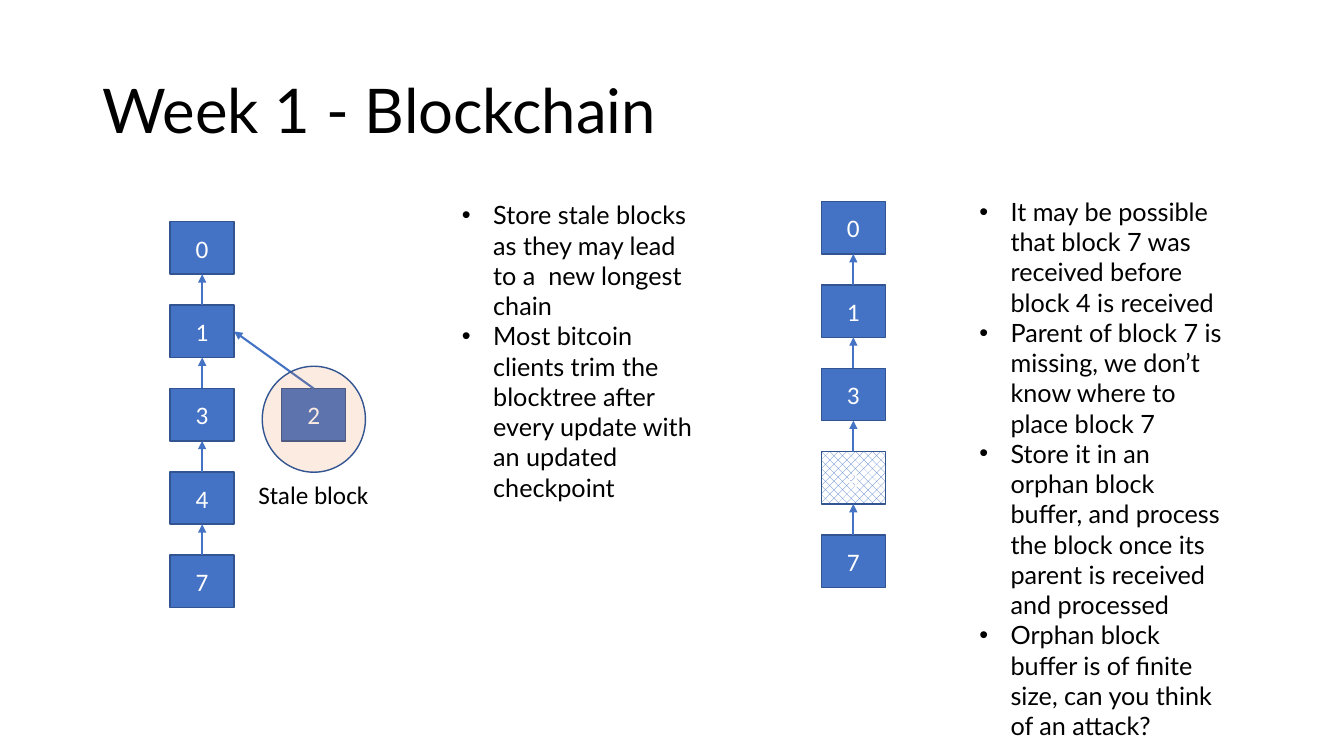
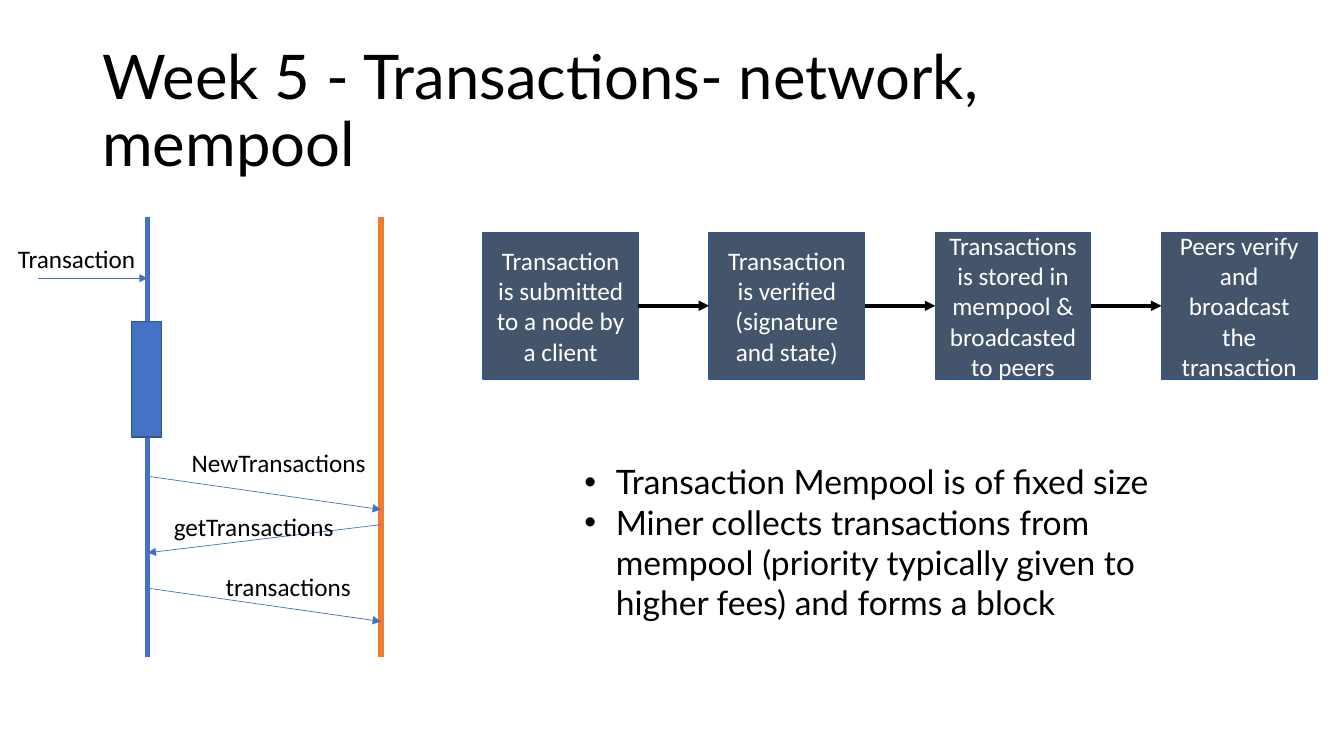
"""Build two slides on block chains and on the path of a transaction."""
from dataclasses import dataclass
from itertools import pairwise

from lxml.etree import SubElement
from pptx import Presentation
from pptx.dml.color import RGBColor
from pptx.enum.dml import MSO_PATTERN
from pptx.enum.shapes import MSO_CONNECTOR, MSO_SHAPE
from pptx.enum.text import MSO_ANCHOR, PP_ALIGN
from pptx.oxml.ns import qn
from pptx.util import Cm, Pt


@dataclass(frozen=True)
class Theme:
    blue: RGBColor = RGBColor.from_string("4472C4")
    outline: RGBColor = RGBColor.from_string("325491")
    orange: RGBColor = RGBColor.from_string("ED7D31")
    slate: RGBColor = RGBColor.from_string("44546A")
    black: RGBColor = RGBColor.from_string("000000")
    white: RGBColor = RGBColor.from_string("FFFFFF")
    heading_font: str = "Lato"
    label_font: str = "Calibri"
    title_size: int = 44
    large_size: int = 24
    text_size: int = 18


theme = Theme()


def add_box(slide, place, lines=(), fill=None, font=theme.label_font, size=theme.text_size,
            bullets=False, wrap=True, kind=MSO_SHAPE.RECTANGLE):
    bounds = [Cm(length) for length in place]
    if fill is None:
        shape = slide.shapes.add_textbox(*bounds)
    else:
        shape = slide.shapes.add_shape(kind, *bounds)
        shape.shadow.inherit = False
        shape.fill.solid()
        shape.fill.fore_color.rgb = fill
        shape.line.color.rgb = theme.outline
        shape.line.width = Pt(1)
        shape.text_frame.vertical_anchor = MSO_ANCHOR.MIDDLE
    frame = shape.text_frame
    frame.word_wrap = wrap
    frame.text = "\n".join(lines)
    for paragraph in frame.paragraphs:
        paragraph.alignment = PP_ALIGN.LEFT if fill is None else PP_ALIGN.CENTER
        if bullets:
            properties = paragraph._p.get_or_add_pPr()
            properties.set("marL", str(Cm(0.79)))
            properties.set("indent", str(-Cm(0.79)))
            SubElement(properties, qn("a:buFont"), typeface="Arial")
            SubElement(properties, qn("a:buChar"), char="•")
        paragraph.font.name = font
        paragraph.font.size = Pt(size)
        paragraph.font.color.rgb = theme.black if fill is None else theme.white
    return shape


def add_line(slide, start=(0, 0), end=(0, 0), color=theme.blue, width=1.5, arrow=True):
    points = [Cm(length) for length in (*start, *end)]
    connector = slide.shapes.add_connector(MSO_CONNECTOR.STRAIGHT, *points)
    connector.line.color.rgb = color
    connector.line.width = Pt(width)
    if arrow:
        SubElement(connector.line._get_or_add_ln(), qn("a:tailEnd"), type="triangle")
    SubElement(connector._element.spPr, qn("a:effectLst"))
    return connector


presentation = Presentation()
presentation.slide_width = Cm(33.87)
presentation.slide_height = Cm(19.05)
slides = []
for title in ("Week 1 - Blockchain", "Week 5 - Transactions- network, mempool"):
    slide = presentation.slides.add_slide(presentation.slide_layouts[6])
    heading = add_box(slide, (2.33, 1.01, 29.21, 3.68), [title],
                      font=theme.heading_font, size=theme.title_size)
    heading.text_frame.vertical_anchor = MSO_ANCHOR.MIDDLE
    heading.text_frame.paragraphs[0].line_spacing = 0.9
    slides.append(slide)
chain_slide, transaction_slide = slides

block_width, block_height, block_pitch = 1.61, 1.32, 2.1
chains = []
for left, top in ((4.29, 5.59), (20.7, 5.08)):
    chain = [add_box(chain_slide, (left, top + row * block_pitch, block_width, block_height),
                     [number], theme.blue)
             for row, number in enumerate("01347")]
    for parent, child in pairwise(chain):
        link = add_line(chain_slide)
        link.begin_connect(child, 0)
        link.end_connect(parent, 2)
    chains.append(chain)
main_chain, broken_chain = chains

missing_fill = broken_chain[3].fill
missing_fill.patterned()
missing_fill.pattern = MSO_PATTERN.from_xml("pct40")
missing_fill.fore_color.rgb = theme.blue
missing_fill.back_color.rgb = theme.white

stale_block = add_box(chain_slide, (7.1, 5.59 + 2 * block_pitch, block_width, block_height),
                      ["2"], theme.blue)
stale_link = add_line(chain_slide)
stale_link.begin_connect(stale_block, 0)
stale_link.end_connect(main_chain[1], 3)
halo = add_box(chain_slide, (6.61, 9.23, 2.6, 2.67), fill=theme.orange, kind=MSO_SHAPE.OVAL)
halo_color = halo._element.spPr.find(qn("a:solidFill")).find(qn("a:srgbClr"))
SubElement(halo_color, qn("a:alpha"), val="15000")
add_box(chain_slide, (6.26, 11.95, 3.32, 1.03), ["Stale block"], wrap=False)

add_box(chain_slide, (11.39, 4.91, 6.62, 7.18), [
    "Store stale blocks as they may lead to a  new longest chain",
    "Most bitcoin clients trim the blocktree after every update with an updated checkpoint",
], font=theme.heading_font, bullets=True)
add_box(chain_slide, (24.43, 4.82, 6.62, 14.1), [
    "It may be possible that block 7 was received before block 4 is received",
    "Parent of block 7 is missing, we don’t know where to place block 7",
    "Store it in an orphan block buffer, and process the block once its parent is received"
    " and processed",
    "Orphan block buffer is of finite size, can you think of an attack?",
], font=theme.heading_font, bullets=True)

node_x, peer_x = 3.72, 9.6
for x, color in ((node_x, theme.blue), (peer_x, theme.orange)):
    add_line(transaction_slide, (x, 5.48), (x, 16.56), color, 4, arrow=False)

messages = (
    ("Transaction", (0.97, 7.01), (node_x, 7.01), (0.2, 6, 3.51, 1.03), False),
    ("NewTransactions", (node_x, 12), (peer_x, 12.84), (4.58, 11.15, 5.31, 1.03), True),
    ("getTransactions", (peer_x, 13.22), (node_x, 13.93), (4.13, 12.76, 5.31, 1.03), True),
    ("transactions", (node_x, 14.82), (peer_x, 15.66), (5.44, 14.28, 4.45, 1.03), True),
)
for message, start, end, place, wrap in messages:
    add_line(transaction_slide, start, end, width=0.5)
    add_box(transaction_slide, place, [message], wrap=wrap)
add_box(transaction_slide, (3.32, 8.11, 0.75, 2.9), fill=theme.blue)

steps = (
    "Transaction is submitted to a node by a client",
    "Transaction is verified (signature and state)",
    "Transactions is stored in mempool & broadcasted to peers",
    "Peers verify and broadcast the transaction",
)
step_boxes = [add_box(transaction_slide, (12.17 + 5.7 * column, 5.86, 3.92, 3.69),
                      [step], theme.slate)
              for column, step in enumerate(steps)]
for previous, following in pairwise(step_boxes):
    step_arrow = add_line(transaction_slide, color=theme.black, width=2.5)
    step_arrow.begin_connect(previous, 3)
    step_arrow.end_connect(following, 1)

add_box(transaction_slide, (14.48, 11.5, 15.67, 5.38), [
    "Transaction Mempool is of fixed size",
    "Miner collects transactions from mempool (priority typically given to higher fees)"
    " and forms a block",
], font=theme.heading_font, size=theme.large_size, bullets=True)

presentation.save("out.pptx")
